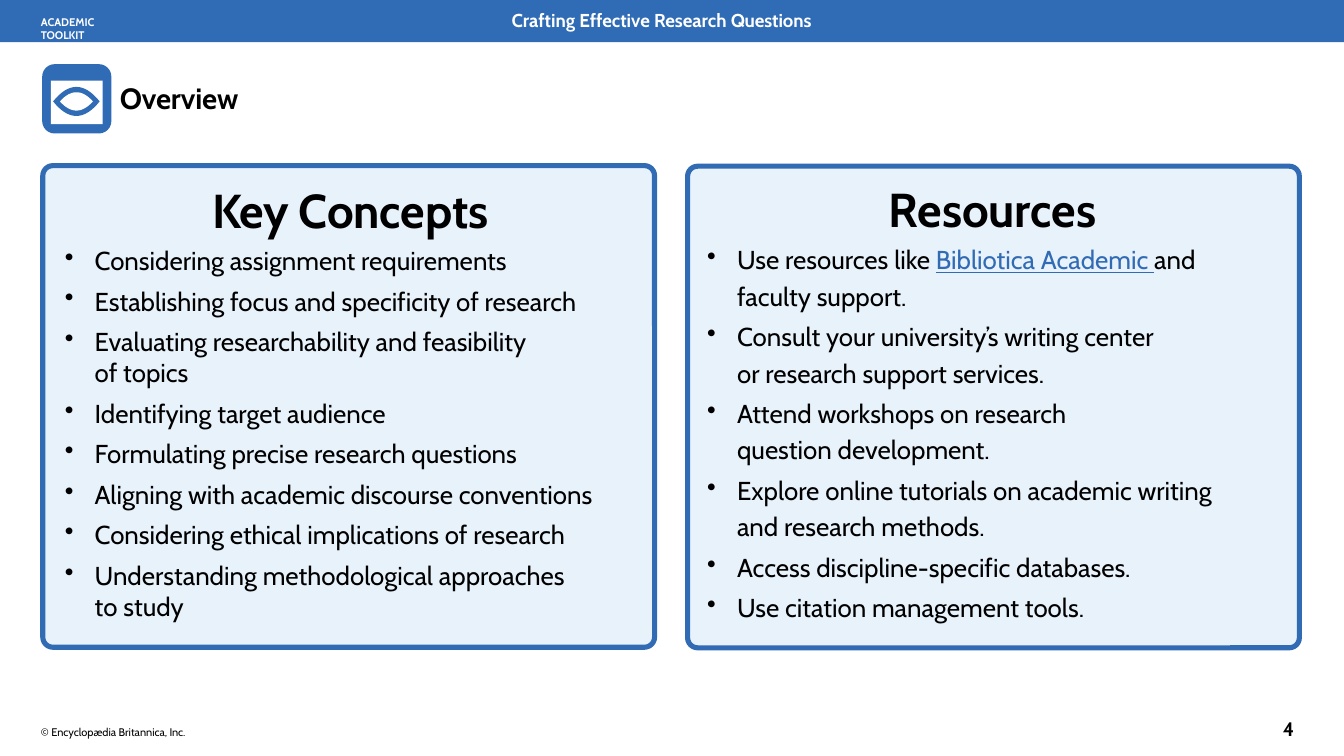
from lxml import etree
from pptx import Presentation
from pptx import util as u
from pptx.dml.color import RGBColor
from pptx.enum import shapes as sh, text as tx
from pptx.oxml.ns import qn

Pt = u.Pt
BLUE = RGBColor(0x30, 0x6C, 0xB5)
EDGE = RGBColor(0x30, 0x6B, 0xB4)
PALE = RGBColor(0xE8, 0xF2, 0xFB)
WHITE = RGBColor(0xFF, 0xFF, 0xFF)
BLACK = RGBColor(0, 0, 0)
RECT = sh.MSO_SHAPE.RECTANGLE
ROUND = sh.MSO_SHAPE.ROUNDED_RECTANGLE

deck = Presentation()
deck.slide_width, deck.slide_height = Pt(1583.28), Pt(890.64)
slide = deck.slides.add_slide(deck.slide_layouts[6])


def block(kind, x, y, w, h, fill, round_by=None):
    item = slide.shapes.add_shape(kind, Pt(x), Pt(y), Pt(w), Pt(h))
    item.shadow.inherit = False
    item.fill.solid()
    item.fill.fore_color.rgb = fill
    item.line.fill.background()
    if round_by:
        item.adjustments[0] = round_by
    return item


def write(par, words, size, color, bold=False, space=0):
    for i, line in enumerate(words.split("\n")):
        if i:
            par.add_line_break()
        run = par.add_run()
        run.text = line
        run.font.name, run.font.size = "Cabin", Pt(size)
        run.font.bold, run.font.color.rgb = bold, color
        if space:
            run.font._element.set("spc", str(space))
    return run


# Top band
block(RECT, 0, 0, 1583.28, 49.7, BLUE)

# Overview icon: frame, window and eye
block(ROUND, 49.7, 75.6, 81.5, 81.7, BLUE, 0.18)
block(RECT, 59.8, 95, 61.2, 51.2, WHITE)
for half, rise, fill in ((27.4, 17.1, BLUE), (19.4, 10.8, WHITE)):
    steps = [n / 8 for n in range(-8, 9)]
    top = [(90 + half * t, 119.5 - rise * (1 - t * t)) for t in steps]
    low = [(x, 239 - y) for x, y in reversed(top)]
    dots = [(Pt(x), Pt(y)) for x, y in top + low[1:-1]]
    pen = slide.shapes.build_freeform(*dots[0], scale=1.0)
    pen.add_line_segments(dots[1:], close=True)
    eye = pen.convert_to_shape()
    eye.shadow.inherit = False
    eye.fill.solid()
    eye.fill.fore_color.rgb = fill
    eye.line.fill.background()

# Single-line labels: place, size, colour, bold, runs with spacing
labels = [
    (602.6, 9.4, 378, 28.8, 22, WHITE, True,
     [("Crafting Effective Research ", 0), ("Questions", -10)]),
    (48.2, 17.3, 116, 18, 13, WHITE, True, [("ACADEMIC ", 0), ("TOOLKIT", -10)]),
    (141.1, 93.6, 144.7, 43.9, 34.5, BLACK, True, [("Overview", -10)]),
    (1511.3, 843.8, 26.6, 29.5, 23, BLACK, True, [("4", -20)]),
    (48.2, 853.9, 185, 18, 13, BLACK, False,
     [("© Encyclopædia Britannica, ", 0), ("Inc.", -20)]),
]
for x, y, w, h, size, color, bold, runs in labels:
    frame = slide.shapes.add_textbox(Pt(x), Pt(y), Pt(w), Pt(h)).text_frame
    frame.word_wrap = True
    frame.margin_left = frame.margin_right = frame.margin_bottom = 0
    frame.margin_top = Pt(1.2)
    for words, space in runs:
        write(frame.paragraphs[0], words, size, color, bold, space)

# Cards: card place, text place, title indent, title runs, bullets
# Each bullet holds its text, line spacing and space before
cards = [
    (50.4, 195.1, 74.9, 198, 673.9, 2, [("Key ", -70), ("Concepts", -10)], [
        ("Considering assignment requirements", 1, 7.8),
        ("Establishing focus and specificity of research", 1, 11.2),
        ("Evaluating researchability and feasibility \nof topics", 1, 11.2),
        ("Identifying target audience", 1, 11.2),
        ("Formulating precise research questions", 1, 11.2),
        ("Aligning with academic discourse conventions", 1, 11.2),
        ("Considering ethical implications of research", 1, 11.2),
        ("Understanding methodological approaches \nto study", 1, 11.2)]),
    (810, 195.8, 831.6, 197.3, 648, 27.4, [("Resources", -10)], [
        ("Use resources like |Bibliotica Academic |and faculty support.", 1.17, 1.5),
        ("Consult your university’s writing center\nor research support services.", 1.17, 5),
        ("Attend workshops on research\nquestion development.", 1.17, 5),
        ("Explore online tutorials on academic writing and research methods.", 1.17, 5),
        ("Access discipline-specific databases.", 1, 11.2),
        ("Use citation management tools.", 1, 11.2)]),
]
for cx, cy, x, y, w, inset, title, points in cards:
    card = block(ROUND, cx, cy, 720.7, 567.4, PALE, 0.021)
    card.line.color.rgb, card.line.width = EDGE, Pt(6)

    frame = slide.shapes.add_textbox(Pt(x), Pt(y), Pt(w), Pt(538.6)).text_frame
    frame.word_wrap = True
    frame.margin_left = frame.margin_right = frame.margin_bottom = 0
    frame.margin_top = Pt(15.1)
    head = frame.paragraphs[0]
    head.alignment = tx.PP_ALIGN.CENTER
    head._p.get_or_add_pPr().set("marL", str(Pt(inset)))
    for words, space in title:
        write(head, words, 56, BLACK, True, space)

    for words, lead, gap in points:
        par = frame.add_paragraph()
        prop = par._p.get_or_add_pPr()
        prop.set("marL", str(Pt(36.7)))
        prop.set("indent", str(Pt(-35.3)))
        etree.SubElement(prop, qn("a:buChar")).set("char", "•")
        par.line_spacing, par.space_before = lead, Pt(gap)
        for i, part in enumerate(words.split("|")):
            run = write(par, part, 30.5, EDGE if i == 1 else BLACK)
            if i == 1:
                run.font.underline = True

deck.save("out.pptx")
